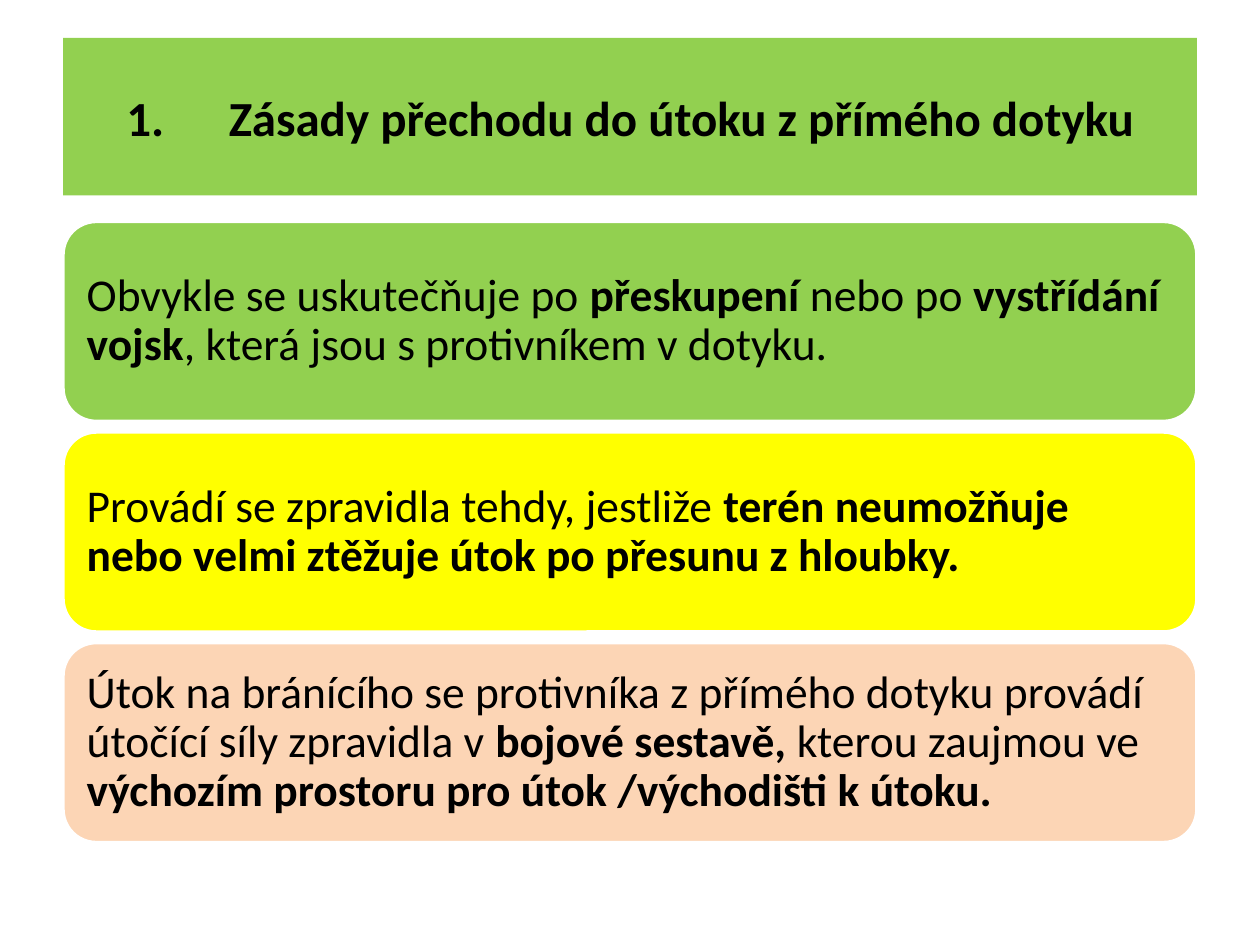
from lxml import etree
from pptx import Presentation
from pptx.dml.color import RGBColor
from pptx.enum.shapes import MSO_SHAPE
from pptx.enum.text import MSO_ANCHOR, PP_ALIGN
from pptx.oxml.ns import qn
from pptx.util import Pt

ROUND = MSO_SHAPE.ROUNDED_RECTANGLE
MIDDLE = MSO_ANCHOR.MIDDLE
LEFT, CENTER = PP_ALIGN.LEFT, PP_ALIGN.CENTER

COLORS = {
    "green": "92D050",
    "yellow": "FFFF00",
    "peach": "FCD5B5",
    "white": "FFFFFF",
    "black": "000000",
}
FONT = "Calibri"
TITLE = "Zásady přechodu do útoku z přímého dotyku"

# Fill of each card, then its runs as (text, bold)
CARDS = [
    ("green", [
        ("Obvykle se uskutečňuje po ", False),
        ("přeskupení", True),
        (" nebo po ", False),
        ("vystřídání vojsk", True),
        (", která jsou s protivníkem v dotyku.", False),
    ]),
    ("yellow", [
        ("Provádí se zpravidla tehdy, jestliže ", False),
        ("terén neumožňuje nebo velmi ztěžuje útok po přesunu z hloubky.", True),
    ]),
    ("peach", [
        ("Útok na bránícího se protivníka z přímého dotyku provádí "
         "útočící síly zpravidla v ", False),
        ("bojové sestavě, ", True),
        ("kterou zaujmou ve ", False),
        ("výchozím prostoru pro útok /východišti k útoku.", True),
    ]),
]


def color(name):
    return RGBColor.from_string(COLORS[name])


def paint(shape, name):
    shape.fill.solid()
    shape.fill.fore_color.rgb = color(name)


def style(para, size, align):
    para.alignment = align
    para.font.name = FONT
    para.font.size = Pt(size)
    para.font.color.rgb = color("black")


def number(para, indent):
    """Number the paragraph, with a hanging indent in points."""
    props = para._p.get_or_add_pPr()
    props.set("marL", str(Pt(indent)))
    props.set("indent", str(-Pt(indent)))
    etree.SubElement(props, qn("a:buFont"), typeface="+mj-lt")
    etree.SubElement(props, qn("a:buAutoNum"), type="arabicPeriod")


def add_title(slide, x, y, w, h):
    title = slide.shapes.title
    title.left, title.top, title.width, title.height = map(Pt, (x, y, w, h))
    paint(title, "green")
    frame = title.text_frame
    frame.text = TITLE
    frame.vertical_anchor = MIDDLE
    para = frame.paragraphs[0]
    number(para, 58.5)
    style(para, 28, CENTER)
    para.font.bold = True


def add_card(slide, x, y, w, h, fill, runs):
    card = slide.shapes.add_shape(ROUND, *map(Pt, (x, y, w, h)))
    card.shadow.inherit = False
    paint(card, fill)
    card.line.color.rgb = color("white")
    card.line.width = Pt(2)
    frame = card.text_frame
    frame.word_wrap = True
    frame.vertical_anchor = MIDDLE
    frame.margin_left = frame.margin_right = Pt(8)
    frame.margin_top = frame.margin_bottom = Pt(8)
    para = frame.paragraphs[0]
    style(para, 26, LEFT)
    para.line_spacing = 0.9
    for text, bold in runs:
        run = para.add_run()
        run.text = text
        run.font.bold = bold


def add_cards(slide, x, y, w, h, gap):
    """Stack the cards evenly in the box."""
    tall = (h - gap * (len(CARDS) - 1)) / len(CARDS)
    for i, (fill, runs) in enumerate(CARDS):
        add_card(slide, x, y + i * (tall + gap), w, tall, fill, runs)


def main():
    deck = Presentation()
    deck.slide_width, deck.slide_height = Pt(720), Pt(540)
    slide = deck.slides.add_slide(deck.slide_layouts[5])
    add_title(slide, 36, 21.6, 648, 90)
    add_cards(slide, 36, 126.5, 648, 355, 6)
    deck.save("out.pptx")


if __name__ == "__main__":
    main()
